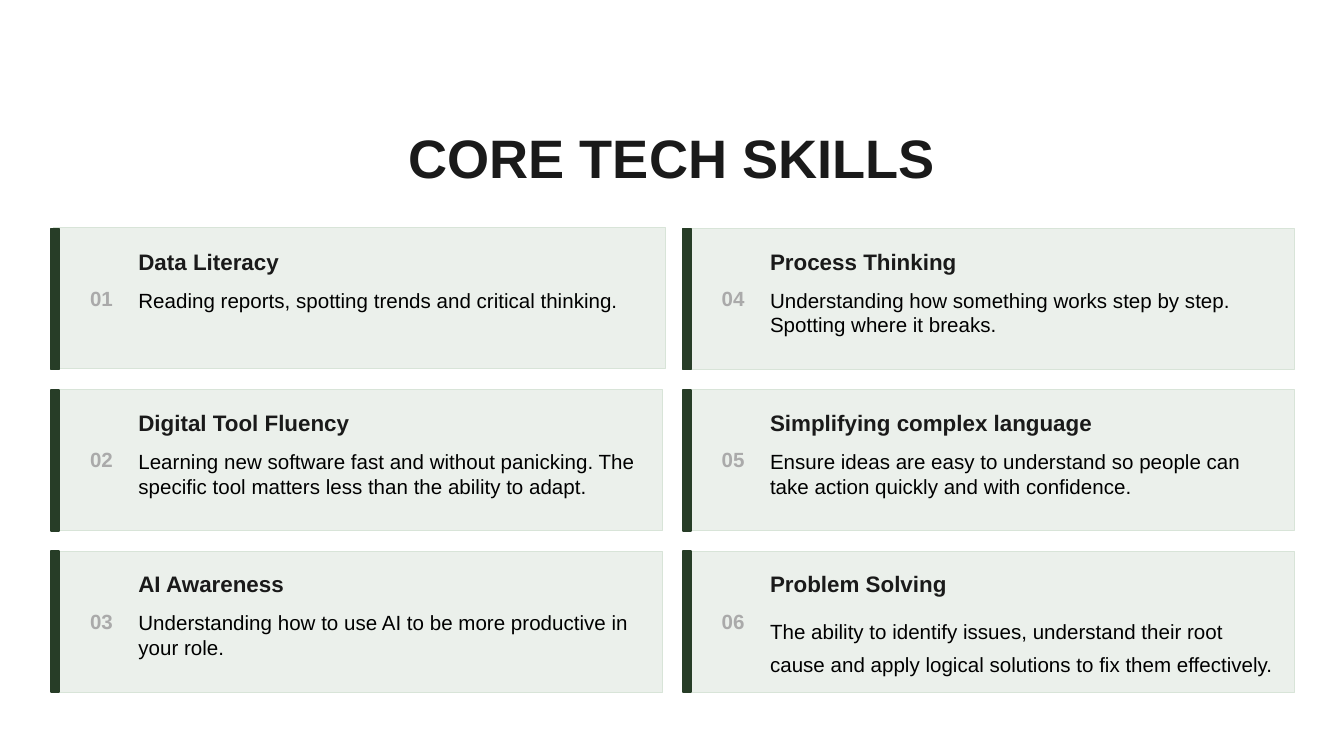
from pptx import Presentation
from pptx import util as u
from pptx.dml import color
from pptx.enum import shapes, text

COLORS = {
    "background": "FFFFFF",
    "ink": "1A1A1A",
    "body": "000000",
    "number": "AAAAAA",
    "panel": "EBF0EB",
    "border": "D8E4D8",
    "accent": "273D27",
}
TITLE = {"size": 29, "bold": True, "color": "ink", "alignment": text.PP_ALIGN.CENTER}
NUMBER = {"size": 11, "bold": True, "color": "number", "alignment": text.PP_ALIGN.CENTER}
HEADING = {"size": 12, "bold": True, "color": "ink"}
BODY = {"size": 11, "bold": False, "color": "body", "anchor": text.MSO_ANCHOR.TOP}

SKILLS = [
    {"heading": "Data Literacy",
     "body": "Reading reports, spotting trends and critical thinking.",
     "body_height": 0.16, "panel_shift": (0.02, -0.01)},
    {"heading": "Digital Tool Fluency",
     "body": "Learning new software fast and without panicking. "
             "The specific tool matters less than the ability to adapt."},
    {"heading": "AI Awareness",
     "body": "Understanding how to use AI to be more productive in your role."},
    {"heading": "Process Thinking",
     "body": "Understanding how something works step by step. Spotting where it breaks."},
    {"heading": "Simplifying complex language",
     "body": "Ensure ideas are easy to understand so people can "
             "take action quickly and with confidence."},
    {"heading": "Problem Solving",
     "body": "The ability to identify issues, understand their root cause "
             "and apply logical solutions to fix them effectively.",
     "body_height": 0.38, "line_spacing": 1.35},
]
ROWS = 3
GRID_LEFT, GRID_TOP = 0.38, 1.7
COLUMN_PITCH, ROW_PITCH = 4.7, 1.2
CARD_WIDTH, CARD_HEIGHT = 4.55, 1.05


def rgb(name):
    return color.RGBColor.from_string(COLORS[name])


def add_text(slide, box, words, style):
    shape = slide.shapes.add_textbox(*map(u.Inches, box))
    frame = shape.text_frame
    frame_values = {
        "margin_left": 0, "margin_top": 0, "margin_right": 0, "margin_bottom": 0,
        "word_wrap": True,
        "auto_size": text.MSO_AUTO_SIZE.SHAPE_TO_FIT_TEXT,
        "vertical_anchor": style.get("anchor", text.MSO_ANCHOR.MIDDLE),
    }
    for name, value in frame_values.items():
        setattr(frame, name, value)
    paragraph = frame.paragraphs[0]
    paragraph.alignment = style.get("alignment")
    paragraph.line_spacing = style.get("line_spacing")
    run = paragraph.add_run()
    run.text = words
    font_values = {"name": "Arial", "size": u.Pt(style["size"]), "bold": style["bold"]}
    for name, value in font_values.items():
        setattr(run.font, name, value)
    run.font.color.rgb = rgb(style["color"])


def add_rectangle(slide, box, fill, line, line_width):
    shape = slide.shapes.add_shape(shapes.MSO_SHAPE.RECTANGLE, *map(u.Inches, box))
    shape.shadow.inherit = False
    shape.fill.solid()
    shape.fill.fore_color.rgb = rgb(fill)
    shape.line.color.rgb = rgb(line)
    shape.line.width = u.Pt(line_width)


def add_card(slide, box, number, skill):
    left, top, width, height = box
    shift_x, shift_y = skill.get("panel_shift", (0, 0))
    body_style = {**BODY, "line_spacing": skill.get("line_spacing")}
    body_height = skill.get("body_height", 0.33)
    text_left, text_width = left + 0.65, width - 0.78
    add_rectangle(slide, (left + shift_x, top + shift_y, width, height), "panel", "border", 0.5)
    add_rectangle(slide, (left, top, 0.06, height), "accent", "accent", 1)
    add_text(slide, (left + 0.15, top + 0.44, 0.45, 0.16), f"{number:02}", NUMBER)
    add_text(slide, (text_left, top + 0.15, text_width, 0.19), skill["heading"], HEADING)
    add_text(slide, (text_left, top + 0.44, text_width, body_height), skill["body"], body_style)


def add_skill_grid(slide, left, top):
    for index, skill in enumerate(SKILLS):
        column, row = divmod(index, ROWS)
        box = (left + column * COLUMN_PITCH, top + row * ROW_PITCH, CARD_WIDTH, CARD_HEIGHT)
        add_card(slide, box, index + 1, skill)


def main():
    presentation = Presentation()
    presentation.slide_width = u.Inches(10)
    presentation.slide_height = presentation.slide_width * 9 // 16
    slide = presentation.slides.add_slide(presentation.slide_layouts[6])
    slide.background.fill.solid()
    slide.background.fill.fore_color.rgb = rgb("background")
    add_text(slide, (0.6, 0.94, 8.8, 0.45), "CORE TECH SKILLS", TITLE)
    add_skill_grid(slide, GRID_LEFT, GRID_TOP)
    presentation.save("out.pptx")


if __name__ == "__main__":
    main()
